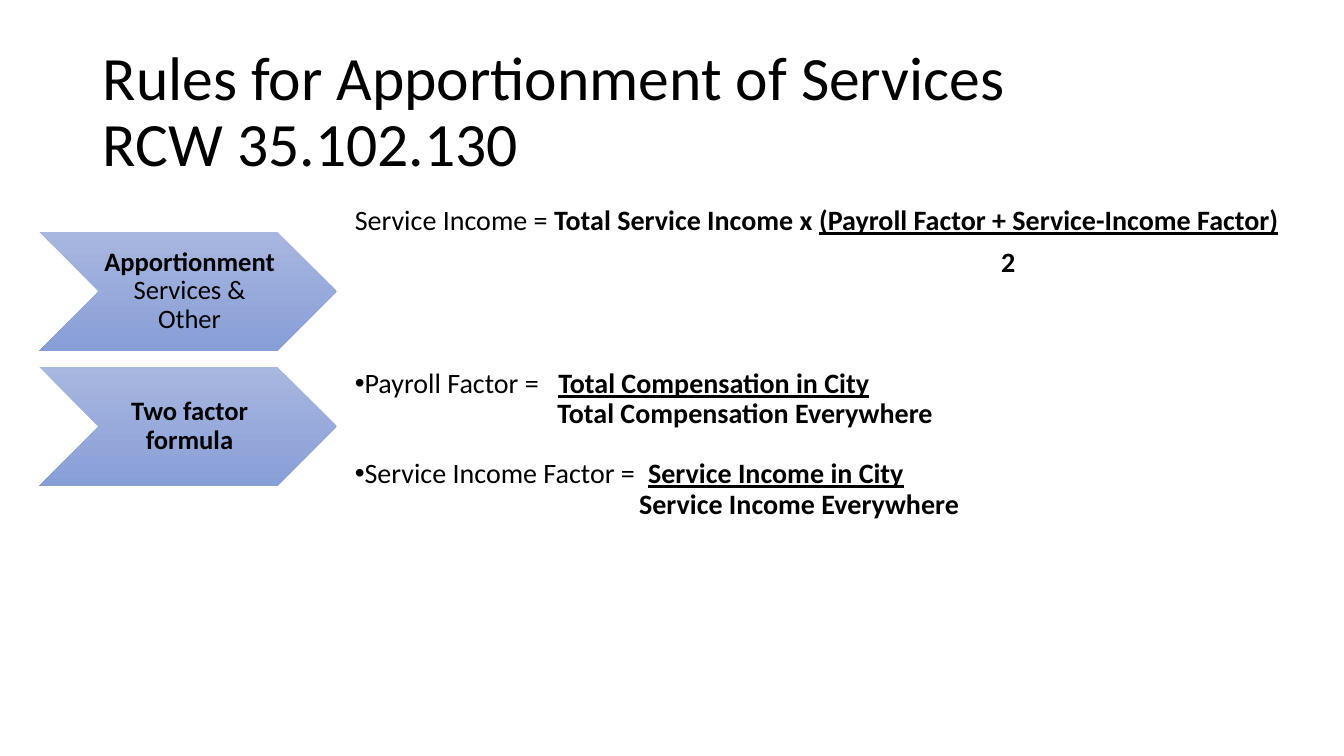
"""Build the slide on apportionment rules for service income."""
from dataclasses import dataclass

from lxml.etree import SubElement
from pptx import Presentation
from pptx.dml.color import RGBColor
from pptx.enum.shapes import MSO_SHAPE as Shape
from pptx.enum.text import MSO_ANCHOR as Anchor, PP_ALIGN as Align
from pptx.oxml.ns import qn
from pptx.slide import Slide
from pptx.text.text import TextFrame, _Paragraph as Paragraph
from pptx.util import Emu, Pt

PX_PER_INCH = 100
FONT = "Calibri"
BLACK = RGBColor(0x00, 0x00, 0x00)
CHEVRON_TOP = RGBColor(0xA8, 0xB7, 0xDF)
CHEVRON_BOTTOM = RGBColor(0x88, 0x9E, 0xD7)


@dataclass(frozen=True)
class Span:
    text: str
    bold: bool = False
    underline: bool = False


@dataclass(frozen=True)
class Line:
    spans: tuple[Span, ...]
    before: float = 0
    indent: int = 0
    tab: int = 0
    bullet: bool = False


@dataclass(frozen=True)
class Step:
    top: int
    spans: tuple[Span, ...]


TITLE = ("Rules for Apportionment of Services", "RCW 35.102.130")
STEPS = (
    Step(230, (Span("Apportionment ", bold=True), Span("Services & Other"))),
    Step(364, (Span("Two factor formula", bold=True),)),
)
FORMULAS = (
    Line((Span("Service Income = "), Span("Total Service Income x ", bold=True),
          Span("(Payroll Factor + Service-Income Factor)", bold=True, underline=True))),
    Line((Span("2", bold=True),), before=8, indent=641),
    Line((Span("Payroll Factor =\t"), Span("Total Compensation in City", bold=True, underline=True)),
         before=65, tab=202, bullet=True),
    Line((Span("Total Compensation Everywhere", bold=True),), indent=201),
    Line((Span("Service Income Factor =\t"), Span("Service Income in City", bold=True, underline=True)),
         before=21.5, tab=291, bullet=True),
    Line((Span("Service Income Everywhere", bold=True),), indent=282),
)


def px(length: int) -> Emu:
    """Turn px into EMU."""
    return Emu(length * 914400 // PX_PER_INCH)


def add_spans(paragraph: Paragraph, spans: tuple[Span, ...], size: int) -> None:
    """Add styled runs to a paragraph."""
    paragraph.line_spacing = 0.9
    for span in spans:
        run = paragraph.add_run()
        run.text = span.text
        font = run.font
        font.name, font.size, font.bold = FONT, Pt(size), span.bold
        font.underline = span.underline
        font.color.rgb = BLACK


def add_text_area(slide: Slide, left: int, top: int, width: int, height: int) -> TextFrame:
    """Add a wrapping text box and return its frame."""
    frame = slide.shapes.add_textbox(px(left), px(top), px(width), px(height)).text_frame
    frame.word_wrap = True
    return frame


def add_title(slide: Slide) -> None:
    """Add the two-line title."""
    frame = add_text_area(slide, 92, 40, 1150, 145)
    frame.vertical_anchor = Anchor.MIDDLE
    heading, citation = TITLE
    paragraph = frame.paragraphs[0]
    add_spans(paragraph, (Span(heading),), 44)
    paragraph.add_line_break()
    add_spans(paragraph, (Span(citation),), 44)


def add_formulas(slide: Slide) -> None:
    """Add the formulas with each denominator under its numerator."""
    frame = add_text_area(slide, 342, 200, 952, 463)
    for index, line in enumerate(FORMULAS):
        paragraph = frame.add_paragraph() if index else frame.paragraphs[0]
        if line.before:
            paragraph.space_before = Pt(line.before)
        properties = paragraph._p.get_or_add_pPr()
        properties.set("marL", str(px(line.indent)))
        properties.set("indent", "0")
        paragraph.line_spacing = 0.9
        if line.bullet:
            SubElement(properties, qn("a:buFont"), typeface="Arial")
            SubElement(properties, qn("a:buChar"), char="•")
        if line.tab:
            tabs = SubElement(properties, qn("a:tabLst"))
            SubElement(tabs, qn("a:tab"), pos=str(px(line.tab)), algn="l")
        add_spans(paragraph, line.spans, 20)


def add_step(slide: Slide, step: Step) -> None:
    """Add a labelled gradient chevron."""
    chevron = slide.shapes.add_shape(Shape.CHEVRON, px(39), px(step.top), px(295), px(118))
    chevron.shadow.inherit = False
    chevron.line.fill.background()
    chevron.fill.gradient()
    chevron.fill.gradient_angle = 270
    for stop, color in zip(chevron.fill.gradient_stops, (CHEVRON_TOP, CHEVRON_BOTTOM)):
        stop.color.rgb = color
    frame = chevron.text_frame
    frame.word_wrap = True
    frame.vertical_anchor = Anchor.MIDDLE
    frame.margin_left, frame.margin_right = px(3), px(0)
    frame.margin_top = frame.margin_bottom = px(1)
    label = frame.paragraphs[0]
    label.alignment = Align.CENTER
    add_spans(label, step.spans, 19)


def main() -> None:
    """Build and save the presentation."""
    presentation = Presentation()
    presentation.slide_width, presentation.slide_height = px(1333), px(750)
    slide = presentation.slides.add_slide(presentation.slide_layouts[6])
    add_title(slide)
    add_formulas(slide)
    for step in STEPS:
        add_step(slide, step)
    presentation.save("out.pptx")


if __name__ == "__main__":
    main()
